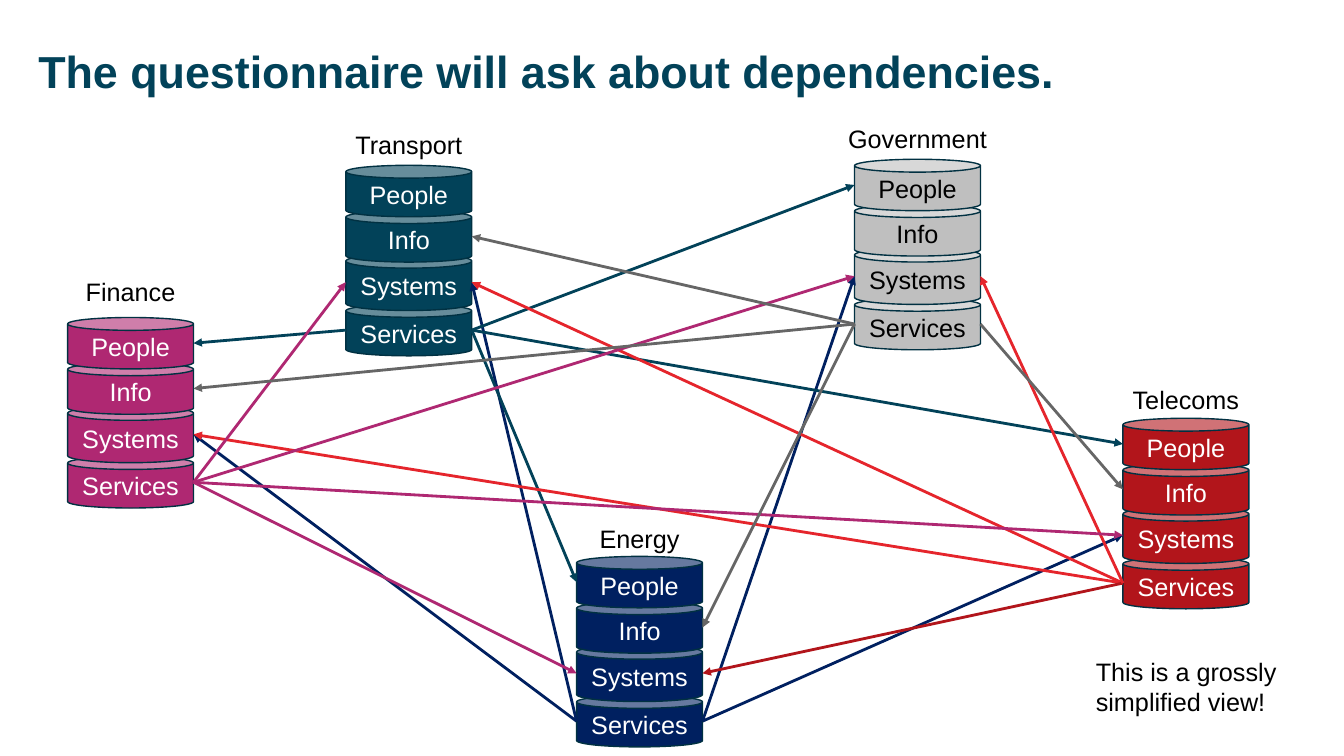
from pptx import Presentation
from pptx import util as u
from pptx.dml import color
from pptx.enum import shapes, text
from pptx.oxml import ns
from lxml import etree

COLORS = {
    "title": "024259", "outline": "013142", "white": "FFFFFF", "black": "000000",
    "magenta": "AF2872", "teal": "024259", "navy": "002060", "silver": "BFBFBF",
    "grey": "666666", "crimson": "B2151B", "red": "E5252C",
}
CAN_WIDTH = 9.37
LAYERS = {
    "Services": (18.4, 6.8),
    "Systems": (11.73, 7.47),
    "Info": (6, 6.8),
    "People": (0, 6.8),
}
SECTORS = {
    "Finance": (5.03, 42, "magenta", "white", 35.87, 8.25),
    "Transport": (25.73, 21.87, "teal", "white", 16.4, 9.53),
    "Energy": (42.9, 73.6, "navy", "white", 68.53, 7.5),
    "Government": (63.58, 21.07, "silver", "black", 15.6, 11.93),
    "Telecoms": (83.55, 55.33, "crimson", "white", 50.13, 9.53),
}
DEPENDENCIES = [
    ("Energy", "Systems", "navy"),
    ("Transport", "People", "teal"),
    ("Telecoms", "Systems", "red"),
    ("Finance", "Systems", "magenta"),
    ("Government", "Info", "grey"),
]
LINE_EXCEPTIONS = {("Telecoms", "Energy"): "crimson"}


class Deck:
    font = "Arial"
    size = u.Pt(18)

    def __init__(self):
        self.prs = Presentation()
        self.prs.slide_width = u.Inches(13.33)
        self.prs.slide_height = u.Inches(7.5)
        self.s = self.prs.slides.add_slide(self.prs.slide_layouts[5])

    def x(self, percent):
        return round(self.prs.slide_width * percent / 100)

    def y(self, percent):
        return round(self.prs.slide_height * percent / 100)

    def box(self, left, top, width, height):
        return self.x(left), self.y(top), self.x(width), self.y(height)

    def rgb(self, name):
        return color.RGBColor.from_string(COLORS[name])

    def set_text(self, tf, words, ink, align, size=None, bold=False):
        tf.text = words
        p = tf.paragraphs[0]
        p.alignment = align
        p.font.name = self.font
        p.font.size = size or self.size
        p.font.bold = bold
        p.font.color.rgb = self.rgb(ink)
        return p

    def title(self, words, *place):
        sp = self.s.shapes.title
        sp.left, sp.top, sp.width, sp.height = self.box(*place)
        tf = sp.text_frame
        tf.margin_left = tf.margin_right = tf.margin_top = tf.margin_bottom = 0
        tf.vertical_anchor = text.MSO_ANCHOR.MIDDLE
        tf.auto_size = text.MSO_AUTO_SIZE.NONE
        p = self.set_text(tf, words, "title", text.PP_ALIGN.LEFT, u.Pt(32), True)
        p.line_spacing = 0.9

    def label(self, words, *place, align=text.PP_ALIGN.LEFT, wrap=True):
        sp = self.s.shapes.add_textbox(*self.box(*place))
        tf = sp.text_frame
        tf.word_wrap = wrap
        self.set_text(tf, words, "black", align)

    def can(self, words, fill, ink, *place):
        sp = self.s.shapes.add_shape(shapes.MSO_SHAPE.CAN, *self.box(*place))
        sp.shadow.inherit = False
        sp.fill.solid()
        sp.fill.fore_color.rgb = self.rgb(fill)
        sp.line.color.rgb = self.rgb("outline")
        sp.line.width = u.Pt(1)
        sp.text_frame.vertical_anchor = text.MSO_ANCHOR.MIDDLE
        self.set_text(sp.text_frame, words, ink, text.PP_ALIGN.CENTER)

    def arrow(self, start, end, stroke):
        sp = self.s.shapes.add_connector(
            shapes.MSO_CONNECTOR.STRAIGHT,
            self.x(start[0]), self.y(start[1]), self.x(end[0]), self.y(end[1]))
        sp.line.color.rgb = self.rgb(stroke)
        sp.line.width = u.Pt(2)
        props = sp._element.spPr
        tail = etree.SubElement(props.find(ns.qn("a:ln")), ns.qn("a:tailEnd"))
        tail.set("type", "triangle")
        etree.SubElement(props, ns.qn("a:effectLst"))

    def sector(self, name):
        left, top, fill, ink, label_top, label_width = SECTORS[name]
        for layer, (offset, height) in LAYERS.items():
            self.can(layer, fill, ink, left, top + offset, CAN_WIDTH, height)
        label_left = left + (CAN_WIDTH - label_width) / 2
        self.label(name, label_left, label_top, label_width, 5.33,
                   align=text.PP_ALIGN.CENTER, wrap=False)

    def dependency(self, source, target, layer, stroke):
        rightward = SECTORS[source][0] < SECTORS[target][0]
        self.arrow(port(source, "Services", rightward),
                   port(target, layer, not rightward), stroke)


def port(sector, layer, right_side):
    left, top = SECTORS[sector][:2]
    offset, height = LAYERS[layer]
    return left + CAN_WIDTH * right_side, top + offset + height / 2


def main():
    deck = Deck()
    deck.title("The questionnaire will ask about dependencies.", 2.85, 5.33, 89.5, 8.8)
    for name in SECTORS:
        deck.sector(name)
    for source, layer, stroke in DEPENDENCIES:
        for target in SECTORS:
            if target != source:
                line = LINE_EXCEPTIONS.get((source, target), stroke)
                deck.dependency(source, target, layer, line)
    deck.label("This is a grossly simplified view!", 80.8, 86.13, 16.05, 9.47)
    deck.prs.save("out.pptx")


if __name__ == "__main__":
    main()
